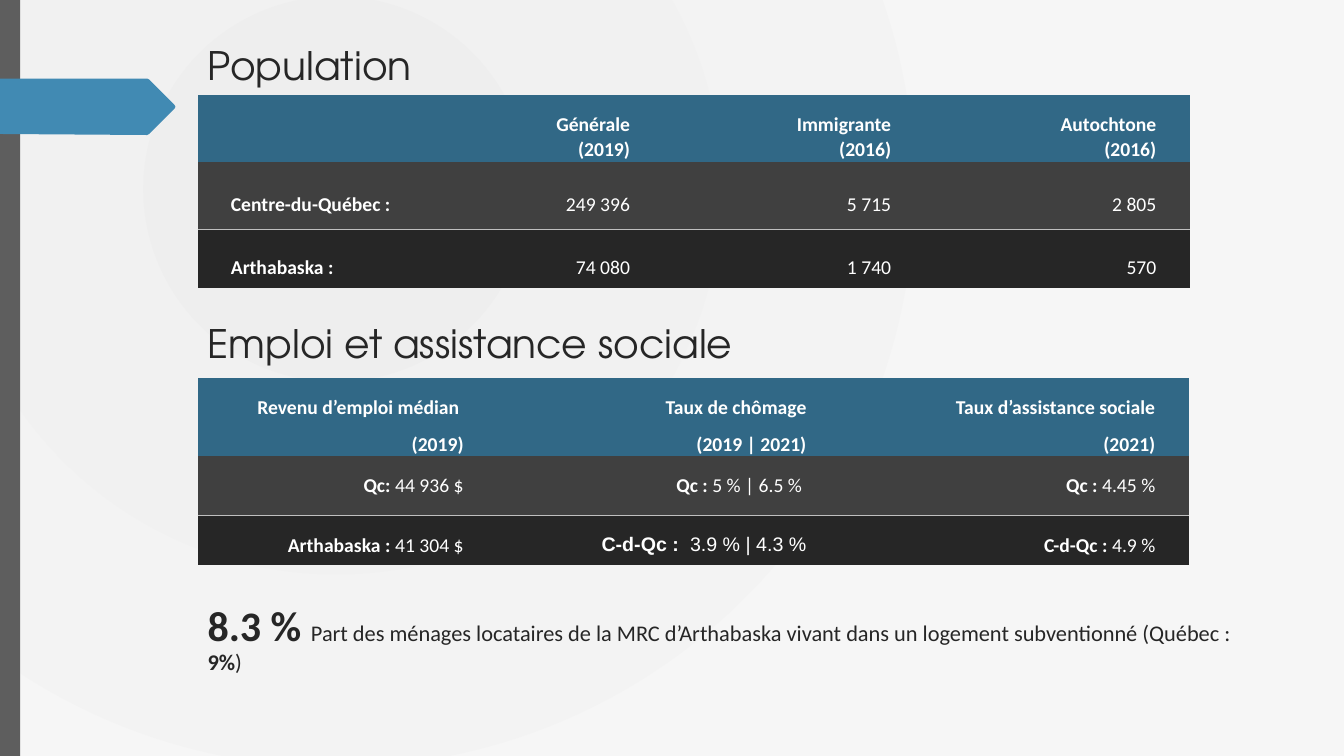
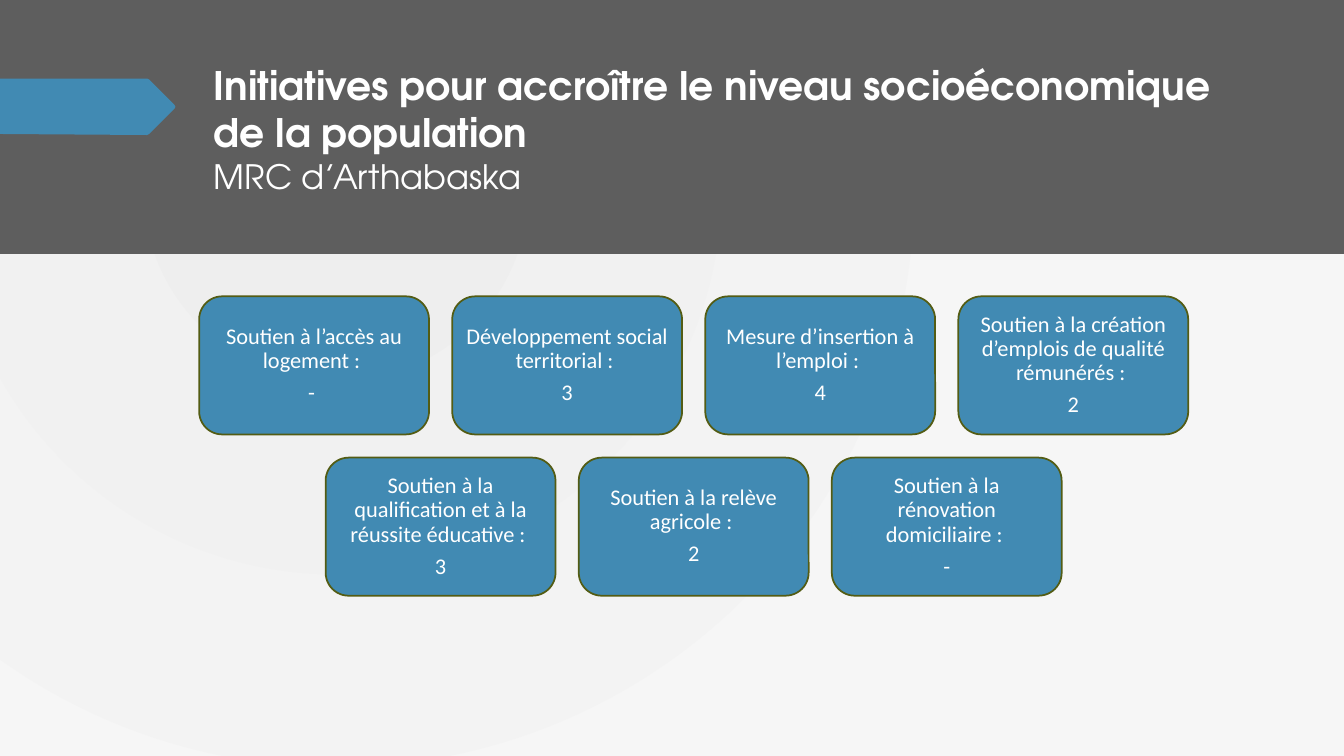
import pptx
import pptx.dml.color
import pptx.enum.shapes
import pptx.enum.text
import pptx.oxml
import pptx.oxml.ns
import pptx.util

PX = 9144  # one hundredth of an inch
HEADING, BODY = "TeX Gyre Adventor", "Calibri"
GREY, BLUE, DARK_BLUE = "5E5E5E", "418AB3", "316886"
INK, CHARCOAL, RULE, WHITE, OLIVE = "262626", "404040", "BFBFBF", "FFFFFF", "535C14"
ROW_FILLS = (DARK_BLUE, CHARCOAL, INK)
NO_STYLE = "{2D5ABB26-0587-4C30-8999-92F81FD0307C}"
LEFT = pptx.enum.text.PP_ALIGN.LEFT
RIGHT = pptx.enum.text.PP_ALIGN.RIGHT
CENTER = pptx.enum.text.PP_ALIGN.CENTER
TOP = pptx.enum.text.MSO_ANCHOR.TOP
MIDDLE = pptx.enum.text.MSO_ANCHOR.MIDDLE
SHAPES = pptx.enum.shapes.MSO_SHAPE

SLIDE_SIZE = (1333, 750)
ARROW = [(0, 78), (146, 78), (148, 79), (173, 104), (174, 106),
         (173, 108), (148, 133), (146, 134), (0, 133)]

# Header cells are lists of lines; other cells are (bold, plain[, font]).
POPULATION = {
    "box": (196, 94, 984, 183),
    "columns": (236, 226, 259, 263),
    "rows": (58, 67, 58),
    "header": ([], ["Générale", "(2019)"], ["Immigrante", "(2016)"], ["Autochtone", "(2016)"]),
    "body": [
        [("Centre-du-Québec :", ""), ("", "249 396"), ("", "5 715"), ("", "2 805")],
        [("Arthabaska :", ""), ("", "74 080"), ("", "1 740"), ("", "570")],
    ],
    "header_gap": 0, "first_align": LEFT, "anchor": MIDDLE,
}
EMPLOYMENT = {
    "box": (196, 375, 983, 178),
    "columns": (297, 340, 346),
    "rows": (70, 59, 49),
    "header": (["Revenu d’emploi médian ", "(2019)"], ["Taux de chômage", "(2019 | 2021)"],
               ["Taux d’assistance sociale", "(2021)"]),
    "body": [
        [("Qc: ", "44 936 $"), ("Qc : ", "5 % | 6.5 % "), ("Qc :", " 4.45 %")],
        [("Arthabaska : ", "41 304 $"), ("C-d-Qc :  ", "3.9 % | 4.3 %", "Arial"),
         ("C-d-Qc :", " 4.9 %")],
    ],
    "header_gap": 8, "first_align": RIGHT, "anchor": TOP,
}
HOUSING = [
    ("8.3 % ", {"size": 30, "bold": True}),
    ("Part des ménages locataires de la MRC d’Arthabaska vivant dans un logement "
     "subventionné (Québec : ", {}),
    ("9%", {"bold": True}),
    (")", {}),
]
INITIATIVES_TITLE = [
    ("Initiatives pour accroître le niveau socioéconomique de la population\n", {"bold": True}),
    ("MRC d’Arthabaska", {"size": 24}),
]
INITIATIVES = [
    [("Soutien à l’accès au logement : ", "- "),
     ("Développement social territorial : ", "3"),
     ("Mesure d’insertion à l’emploi : ", "4"),
     ("Soutien à la création d’emplois de qualité rémunérés : ", "2")],
    [("Soutien à la qualification et à la réussite éducative : ", "3"),
     ("Soutien à la relève agricole : ", "2"),
     ("Soutien à la rénovation domiciliaire : ", "-")],
]
CARD_WIDTH, CARD_HEIGHT, CARD_TOP, CARDS_CENTER = 228, 137, 294, 688
CARD_STEP_X, CARD_STEP_Y = 251, 160


def emu(*lengths):
    return [round(length * PX) for length in lengths]


def color(code):
    return pptx.dml.color.RGBColor.from_string(code)


def write(frame, paragraphs, font=BODY, size=16, ink=INK, bold=False, align=LEFT,
          anchor=TOP, spacing=1.0, after=0, insets=(10, 5, 10, 5)):
    """Fill a frame; a paragraph is a string or a list of (text, overrides)."""
    frame.word_wrap = True
    frame.auto_size = pptx.enum.text.MSO_AUTO_SIZE.NONE
    frame.vertical_anchor = anchor
    (frame.margin_left, frame.margin_top,
     frame.margin_right, frame.margin_bottom) = emu(*insets)
    write_paragraphs(frame, paragraphs, font, size, ink, bold, align, spacing, after)


def write_paragraphs(frame, paragraphs, font, size, ink, bold, align, spacing, after):
    for index, spans in enumerate(paragraphs):
        para = frame.add_paragraph() if index else frame.paragraphs[0]
        para.alignment, para.line_spacing = align, spacing
        last = index == len(paragraphs) - 1
        gap = after if isinstance(after, (int, float)) else after[last]
        para.space_after = pptx.util.Pt(gap)
        for text, changes in [(spans, {})] if isinstance(spans, str) else spans:
            span = para.add_run()
            span.text = text.rstrip("\n")
            span.font.name = changes.get("font", font)
            span.font.size = pptx.util.Pt(changes.get("size", size))
            span.font.bold = changes.get("bold", bold)
            span.font.color.rgb = color(ink)
            if text.endswith("\n"):
                para.add_line_break()


def paint(shape, fill, line=None):
    shape.shadow.inherit = False
    shape.fill.solid()
    shape.fill.fore_color.rgb = color(fill)
    if line:
        shape.line.color.rgb = color(line)
        shape.line.width = pptx.util.Pt(1.25)
    else:
        shape.line.fill.background()


def set_background(master):
    master.background.fill.solid()
    solid = master._element.find(".//" + pptx.oxml.ns.qn("p:bgPr"))[0]
    stops = "".join(f'<a:gs pos="{place}"><a:srgbClr val="{code}"/></a:gs>'
                    for place, code in ((0, "EEEEEE"), (100000, "F6F6F6")))
    gradient = pptx.oxml.parse_xml(
        f'<a:gradFill {pptx.oxml.ns.nsdecls("a")} rotWithShape="1"><a:gsLst>{stops}</a:gsLst>'
        '<a:path path="circle"><a:fillToRect l="50000" t="50000" r="100000" b="100000"/>'
        '</a:path></a:gradFill>')
    solid.getparent().replace(solid, gradient)


def add_page(deck, band_size, title_box, title, ink):
    """Add a slide with its grey band, blue arrow and title."""
    page = deck.slides.add_slide(deck.slide_layouts[5])
    heading = page.shapes.title
    heading.left, heading.top, heading.width, heading.height = emu(*title_box)
    write(heading.text_frame, [title], font=HEADING, size=28, ink=ink)
    band = page.shapes.add_shape(SHAPES.RECTANGLE, 0, 0, *emu(*band_size))
    paint(band, GREY)
    page.shapes._spTree.insert(2, band._element)
    outline = page.shapes.build_freeform(*ARROW[0], scale=PX)
    outline.add_line_segments(ARROW[1:], close=True)
    paint(outline.convert_to_shape(), BLUE)
    return page


def add_text(page, bounds, paragraphs, **style):
    box = page.shapes.add_textbox(*emu(*bounds))
    write(box.text_frame, paragraphs, **style)


def add_rule(cell, side):
    properties = cell._tc.get_or_add_tcPr()
    properties.insert(0, pptx.oxml.parse_xml(
        f'<a:{side} {pptx.oxml.ns.nsdecls("a")} w="12700"><a:solidFill>'
        f'<a:srgbClr val="{RULE}"/></a:solidFill></a:{side}>'))


def fill_cell(cell, paragraphs, **style):
    cell.margin_left, cell.margin_top, cell.margin_right, cell.margin_bottom = emu(33, 16, 33, 0)
    cell.vertical_anchor = style.pop("anchor")
    write_paragraphs(cell.text_frame, paragraphs, size=14, ink=WHITE, bold=True,
                     spacing=1.07, **style)


def add_data_table(page, data):
    rows = [data["header"], *data["body"]]
    frame = page.shapes.add_table(len(rows), len(data["columns"]), *emu(*data["box"]))
    table = frame.table
    table._tbl.tblPr.find(pptx.oxml.ns.qn("a:tableStyleId")).text = NO_STYLE
    for column, width in zip(table.columns, emu(*data["columns"])):
        column.width = width
    for row, height in zip(table.rows, emu(*data["rows"])):
        row.height = height
    for r, values in enumerate(rows):
        for c, value in enumerate(values):
            cell = table.cell(r, c)
            cell.fill.solid()
            cell.fill.fore_color.rgb = color(ROW_FILLS[r])
            if r == 0:
                fill_cell(cell, value, font=BODY, align=RIGHT, anchor=TOP,
                          after=(data["header_gap"], 8))
                continue
            strong, plain, *other = value
            spans = [(text, {"bold": text is strong}) for text in (strong, plain) if text]
            fill_cell(cell, [spans], font=other[0] if other else BODY, after=8,
                      align=RIGHT if c else data["first_align"], anchor=data["anchor"])
            add_rule(cell, "lnB" if r == 1 else "lnT")


def add_cards(page):
    for r, cards in enumerate(INITIATIVES):
        row_width = (len(cards) - 1) * CARD_STEP_X + CARD_WIDTH
        for c, lines in enumerate(cards):
            card = page.shapes.add_shape(SHAPES.ROUNDED_RECTANGLE, *emu(
                CARDS_CENTER - row_width / 2 + c * CARD_STEP_X,
                CARD_TOP + r * CARD_STEP_Y, CARD_WIDTH, CARD_HEIGHT))
            paint(card, BLUE, OLIVE)
            write(card.text_frame, lines, ink=WHITE, align=CENTER, anchor=MIDDLE,
                  spacing=0.9, after=5.6, insets=(6, 7, 6, 7))


def main():
    deck = pptx.Presentation()
    deck.slide_width, deck.slide_height = emu(*SLIDE_SIZE)
    set_background(deck.slide_master)

    page = add_page(deck, (20, 750), (196, 36, 1062, 140), "Population", INK)
    add_data_table(page, POPULATION)
    add_text(page, (196, 312, 1062, 81), ["Emploi et assistance sociale"], font=HEADING, size=28)
    add_data_table(page, EMPLOYMENT)
    add_text(page, (196, 596, 1062, 81), [HOUSING], spacing=0.9)

    page = add_page(deck, (1333, 252), (202, 56, 1026, 159), INITIATIVES_TITLE, WHITE)
    add_cards(page)
    deck.save("out.pptx")


if __name__ == "__main__":
    main()
